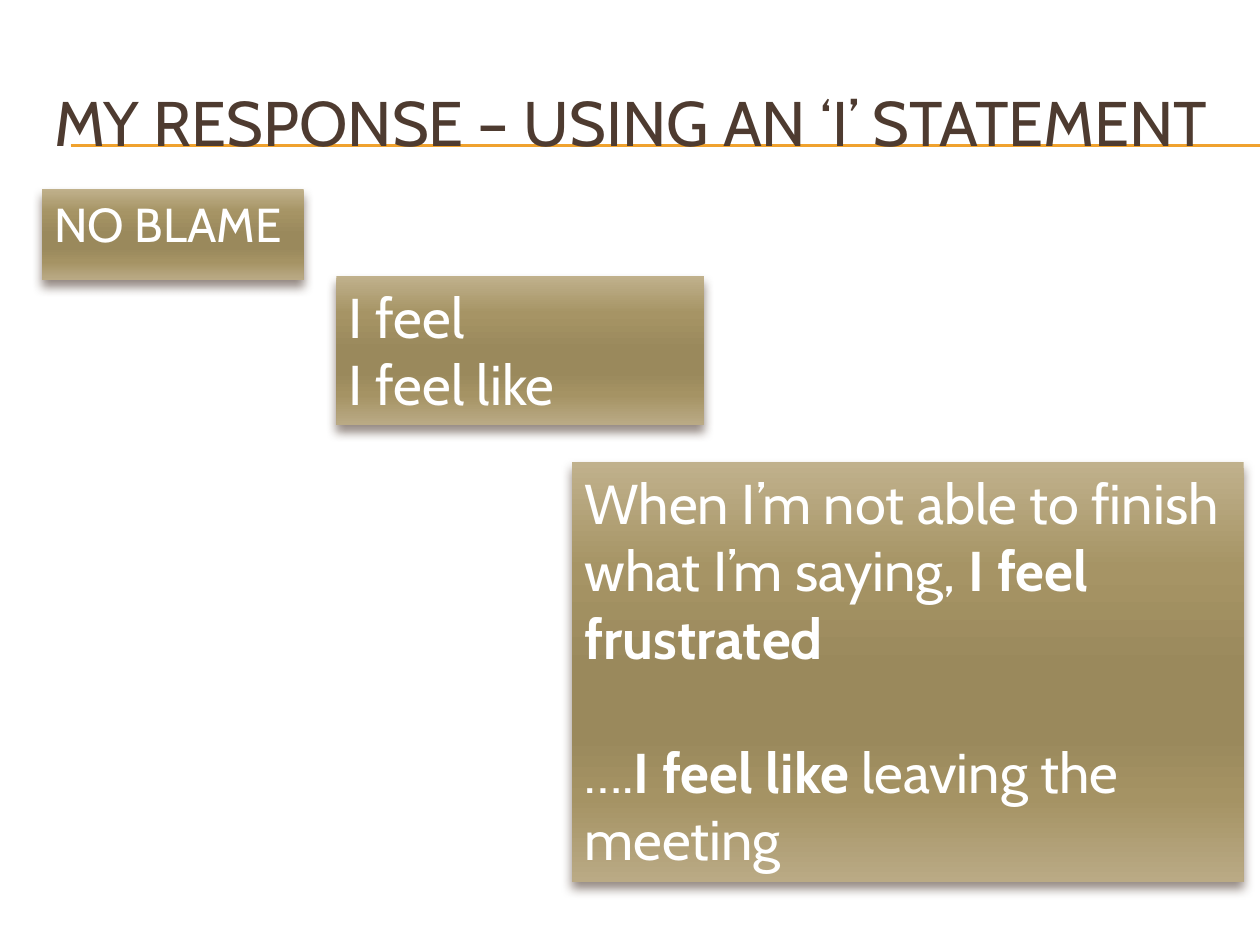
from lxml import etree
from pptx import Presentation
from pptx.dml.color import RGBColor as RGB
from pptx.enum.shapes import MSO_CONNECTOR as LINE, MSO_SHAPE as SHAPE
from pptx.enum.text import MSO_ANCHOR as ANCHOR, MSO_AUTO_SIZE as FIT, PP_ALIGN as ALIGN
from pptx.oxml.ns import qn
from pptx.util import Inches, Pt

# Content: each box is (place, size in points, paragraphs of (text, bold) runs)
TITLE = "MY RESPONSE – USING AN ‘I’ STATEMENT"
BLAME = ((0.33, 1.5, 2.08, 0.72), 27.2, [[("NO BLAME", False)]])
BOXES = [
    ((2.67, 2.19, 2.92, 1.18), 32,
     [[("I feel", False)], [("I feel like", False)]]),
    ((4.54, 3.67, 5.33, 3.33), 32,
     [[("When I’m not able to finish what I’m saying, ", False),
       ("I feel frustrated", True)],
      [("….", False), ("I feel like ", True), ("leaving the meeting", False)]]),
]
FONT = "Cabin"
COLORS = {"rule": "F0A22E", "dark": "4E3B30", "text": "FFFFFF"}
STOPS = [(0, "C0B18C"), (25, "A69465"), (50, "9A895C"),
         (65, "9A895C"), (80, "A59364"), (100, "BAAA85")]
GAP = 38.4  # one line of 32 pt text


def sub(parent, tag, **attrs):
    return etree.SubElement(parent, qn(tag), {k: str(v) for k, v in attrs.items()})


def place(shape, spot):
    shape.left, shape.top, shape.width, shape.height = map(Inches, spot)


def style(par, size, color):
    par.alignment = ALIGN.LEFT
    par.font.name, par.font.size = FONT, Pt(size)
    par.font.color.rgb = RGB.from_string(COLORS[color])


def paint(shape):
    """Give a box its gold gradient and soft shadow."""
    shape.fill.gradient()
    shape.fill.gradient_angle = 270
    stops = shape._element.spPr.find(".//" + qn("a:gsLst"))
    for old in list(stops):
        stops.remove(old)
    for pos, color in STOPS:
        sub(sub(stops, "a:gs", pos=pos * 1000), "a:srgbClr", val=color)
    shape.line.fill.background()
    shape.shadow.inherit = False
    glow = sub(shape._element.spPr.find(qn("a:effectLst")), "a:outerShdw",
               blurRad=Pt(6), dist=Pt(4), dir=5400000, rotWithShape=0)
    sub(sub(glow, "a:srgbClr", val=COLORS["dark"]), "a:alpha", val=60000)


def write(shape, size, pars):
    frame = shape.text_frame
    frame.word_wrap, frame.auto_size = True, FIT.NONE
    frame.vertical_anchor = ANCHOR.TOP
    for i, runs in enumerate(pars):
        par = frame.add_paragraph() if i else frame.paragraphs[0]
        style(par, size, "text")
        for text, bold in runs:
            run = par.add_run()
            run.text, run.font.bold = text, bold


def main():
    deck = Presentation()
    deck.slide_width, deck.slide_height = Inches(10), Inches(7.5)
    slide = deck.slides.add_slide(deck.slide_layouts[1])
    shapes = slide.shapes

    # Double rule, behind the title
    for i, y in enumerate((1.15, 1.16)):
        rule = shapes.add_connector(LINE.STRAIGHT, Inches(0.56), Inches(y),
                                    Inches(10), Inches(y))
        rule.line.color.rgb = RGB.from_string(COLORS["rule"])
        rule.line.width = Pt(0.75)
        sub(rule._element.spPr, "a:effectLst")
        shapes._spTree.insert(2 + i, rule._element)

    # Title
    title = shapes.title
    place(title, (0.33, 0.5, 9.5, 0.92))
    title.text_frame.text = TITLE
    title.text_frame.vertical_anchor = ANCHOR.MIDDLE
    title.text_frame.auto_size = FIT.NONE
    style(title.text_frame.paragraphs[0], 36, "dark")

    # Body heading without a bullet
    spot, size, pars = BLAME
    body = slide.placeholders[1]
    place(body, spot)
    paint(body)
    write(body, size, pars)
    props = body.text_frame.paragraphs[0]._p.get_or_add_pPr()
    props.set("marL", "0")
    props.set("indent", "0")
    props.insert(0, props.makeelement(qn("a:buNone"), {}))

    # Example boxes
    for spot, size, pars in BOXES:
        box = shapes.add_shape(SHAPE.RECTANGLE, *map(Inches, spot))
        paint(box)
        write(box, size, pars)
    box.text_frame.paragraphs[-1].space_before = Pt(GAP)

    deck.save("out.pptx")


if __name__ == "__main__":
    main()
